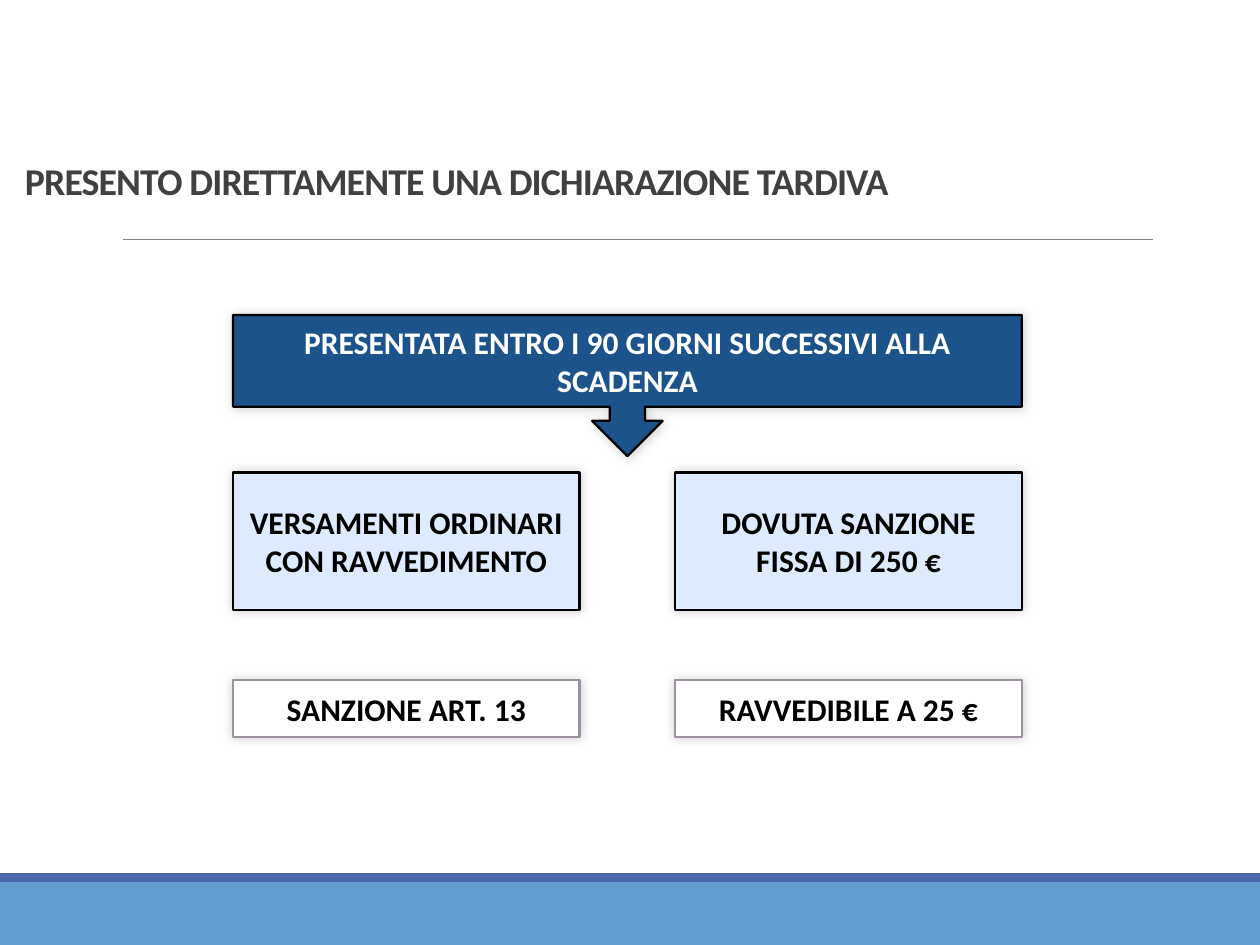
import pptx
import pptx.dml.color
import pptx.enum.shapes
import pptx.enum.text
import pptx.oxml
import pptx.oxml.ns
import pptx.util

# Content
TITLE = "PRESENTO DIRETTAMENTE UNA DICHIARAZIONE TARDIVA"
PREMISE = "PRESENTATA ENTRO I 90 GIORNI SUCCESSIVI ALLA SCADENZA"
OUTCOMES = [  # one tuple per column: obligation, penalty
    ("VERSAMENTI ORDINARI CON RAVVEDIMENTO", "SANZIONE ART. 13"),
    ("DOVUTA SANZIONE FISSA DI 250 €", "RAVVEDIBILE A 25 €"),
]

THEME = {
    "font": "Calibri", "title_size": 21.6, "box_size": 18,
    "title": "404040", "rule": "808080", "band": "629DD1", "stripe": "4A66AC",
    "premise": {"fill": "1B538A", "line": "000000", "text": "FFFFFF"},
    "obligation": {"fill": "DEEAFD", "line": "000000", "text": "000000"},
    "penalty": {"fill": "FFFFFF", "line": "9D90A0", "text": "000000"},
}

# Grid, in inches
WIDTH, HEIGHT = 10, 7.5
BAND_TOP, STRIPE_HEIGHT = 7, 0.07
LEFT, COLUMN_WIDTH, GUTTER = 1.85, 2.75, 0.76
CONTENT_WIDTH = 2 * COLUMN_WIDTH + GUTTER
PREMISE_ROW = (2.5, 1.12)
ROWS = [("obligation", 3.75, 1.09), ("penalty", 5.4, 0.45)]

SHAPES = pptx.enum.shapes.MSO_SHAPE
ALIGN = pptx.enum.text.PP_ALIGN
ANCHOR = pptx.enum.text.MSO_ANCHOR
SHADOW = (
    f'<a:outerShdw {pptx.oxml.ns.nsdecls("a")} blurRad="76200" dist="0" dir="13500000" '
    'rotWithShape="0"><a:srgbClr val="000000"><a:alpha val="20000"/></a:srgbClr></a:outerShdw>'
)


def inches(*lengths):
    return [pptx.util.Inches(length) for length in lengths]


def color(value):
    return pptx.dml.color.RGBColor.from_string(value)


def apply(target, values):
    for name, value in values.items():
        setattr(target, name, value)


def write(shape, text, size, text_color, anchor, **paragraph_format):
    frame = shape.text_frame
    apply(frame, {"word_wrap": True, "vertical_anchor": anchor})
    paragraph = frame.paragraphs[0]
    apply(paragraph, paragraph_format)
    run = paragraph.add_run()
    run.text = text
    apply(run.font, {"name": THEME["font"], "size": pptx.util.Pt(size), "bold": True})
    run.font.color.rgb = color(text_color)
    return run


def add_filled(slide, kind, area, fill):
    shape = slide.shapes.add_shape(kind, *inches(*area))
    shape.shadow.inherit = False
    shape.fill.solid()
    shape.fill.fore_color.rgb = color(fill)
    shape.line.fill.background()
    return shape


def add_box(slide, kind, area, text, style):
    shape = add_filled(slide, kind, area, style["fill"])
    shape.line.color.rgb = color(style["line"])
    shape.line.width = pptx.util.Pt(1.25)
    effects = shape.element.spPr.find(pptx.oxml.ns.qn("a:effectLst"))
    effects.append(pptx.oxml.parse_xml(SHADOW))
    write(shape, text, THEME["box_size"], style["text"], ANCHOR.MIDDLE, alignment=ALIGN.CENTER)


def main():
    presentation = pptx.Presentation()
    presentation.slide_width, presentation.slide_height = inches(WIDTH, HEIGHT)
    slide = presentation.slides.add_slide(presentation.slide_layouts[6])

    # Footer bands
    add_filled(slide, SHAPES.RECTANGLE, (0, BAND_TOP, WIDTH, HEIGHT - BAND_TOP), THEME["band"])
    add_filled(slide, SHAPES.RECTANGLE,
               (0, BAND_TOP - STRIPE_HEIGHT, WIDTH, STRIPE_HEIGHT), THEME["stripe"])

    # Title and rule
    rule = slide.shapes.add_connector(
        pptx.enum.shapes.MSO_CONNECTOR.STRAIGHT, *inches(0.98, 1.9, 9.15, 1.9))
    rule.line.color.rgb = color(THEME["rule"])
    rule.line.width = pptx.util.Pt(0.5)
    rule.element.spPr.append(pptx.oxml.parse_xml(f'<a:effectLst {pptx.oxml.ns.nsdecls("a")}/>'))
    title = slide.shapes.add_textbox(*inches(0.1, 1.21, 7.5, 0.45))
    run = write(title, TITLE, THEME["title_size"], THEME["title"], ANCHOR.BOTTOM,
                line_spacing=0.85)
    run.font._element.set("spc", "-50")

    # Premise, pointing down to the outcomes
    top, height = PREMISE_ROW
    add_box(slide, SHAPES.DOWN_ARROW_CALLOUT, (LEFT, top, CONTENT_WIDTH, height),
            PREMISE, THEME["premise"])

    # Outcome grid
    for column, texts in enumerate(OUTCOMES):
        left = LEFT + column * (COLUMN_WIDTH + GUTTER)
        for text, (style, top, height) in zip(texts, ROWS):
            add_box(slide, SHAPES.RECTANGLE, (left, top, COLUMN_WIDTH, height),
                    text, THEME[style])

    presentation.save("out.pptx")


if __name__ == "__main__":
    main()
